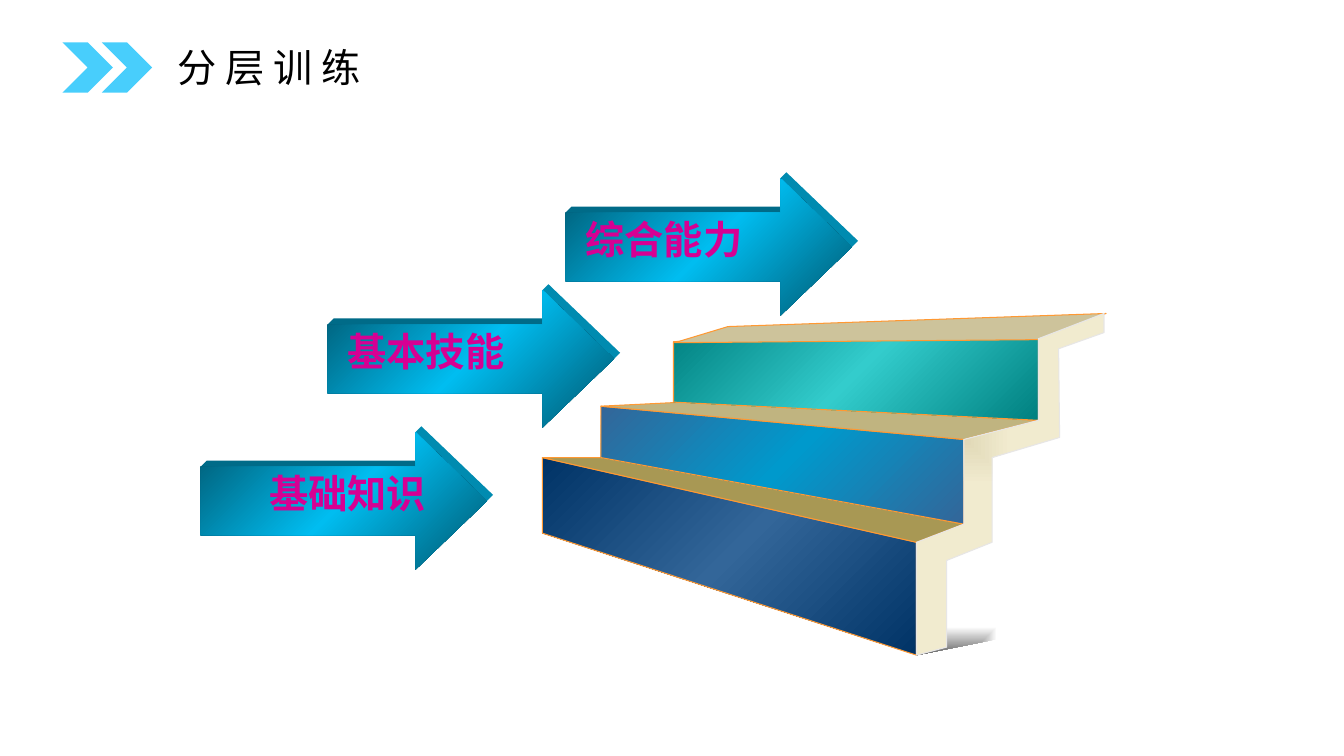
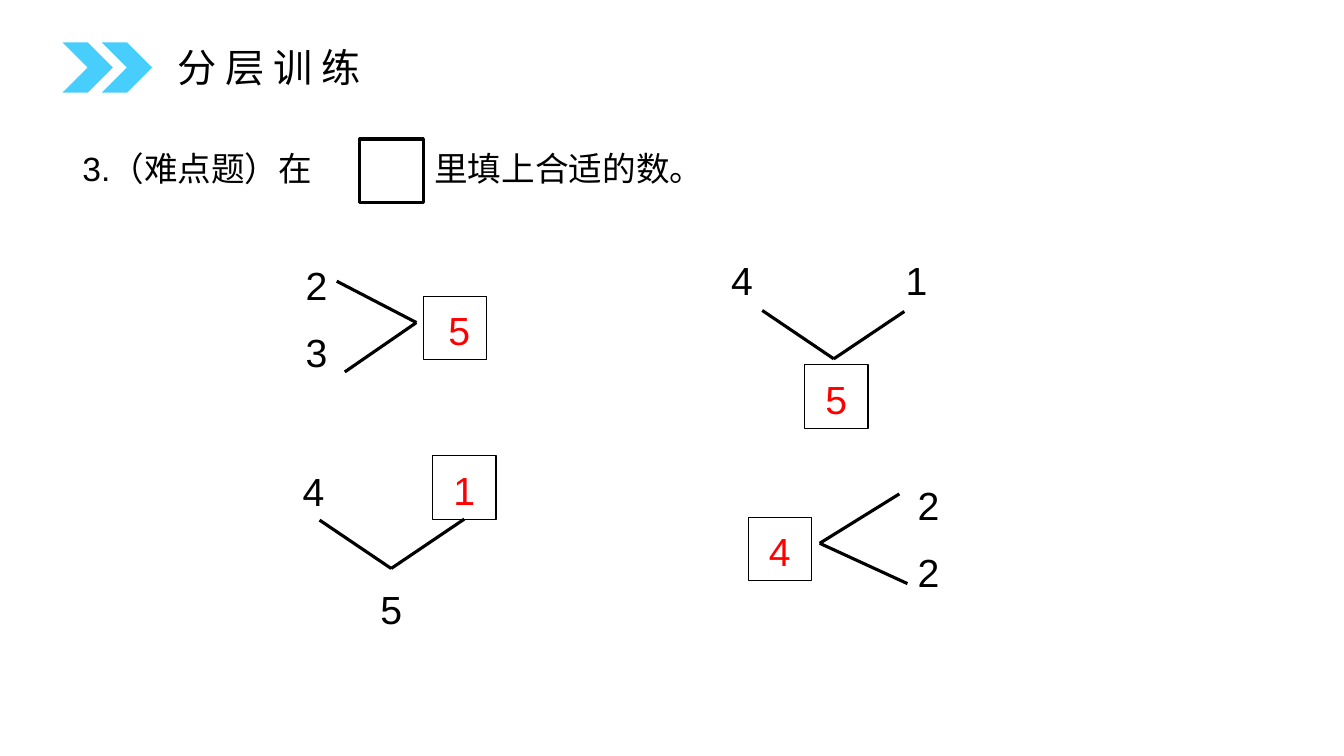
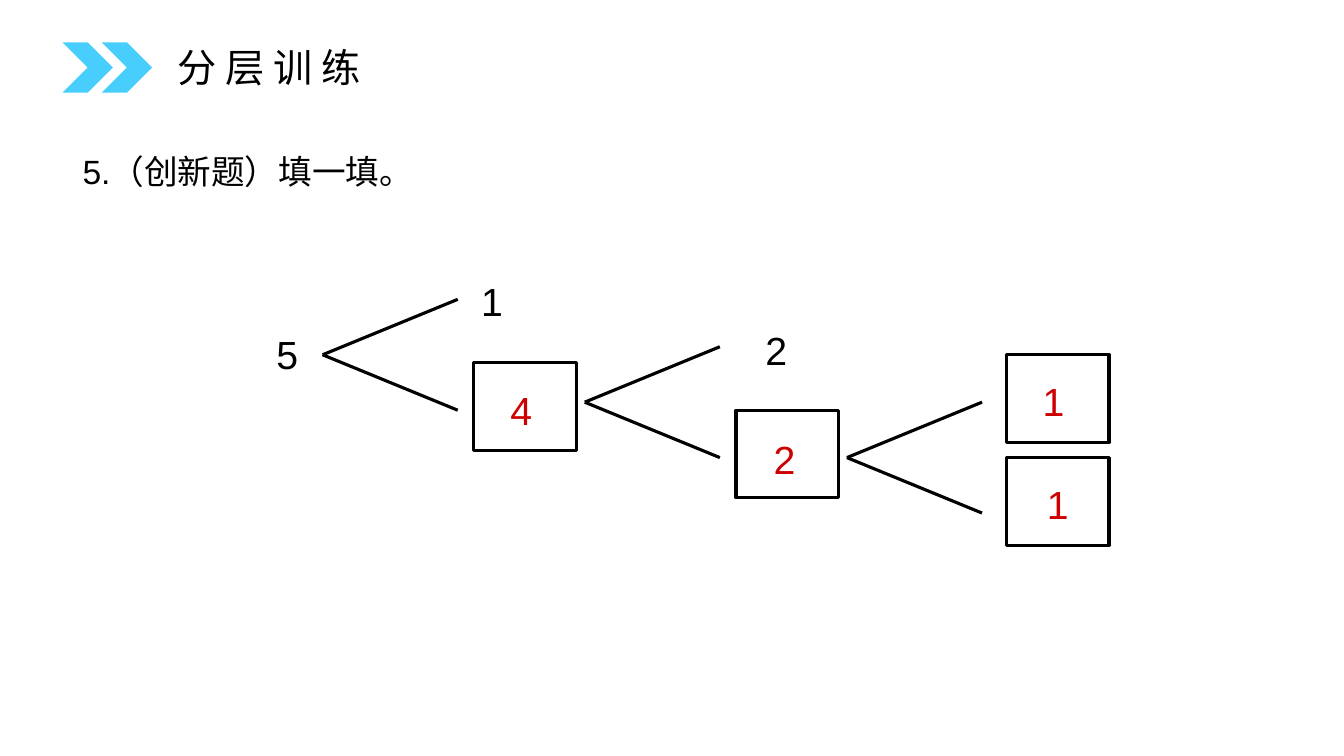
"""Build three slides of layered number exercises."""
from pptx import Presentation
from pptx.dml.color import RGBColor
from pptx.enum.lang import MSO_LANGUAGE_ID
from pptx.enum.shapes import MSO_CONNECTOR, MSO_SHAPE
from pptx.enum.text import MSO_ANCHOR, PP_ALIGN
from pptx.oxml import parse_xml
from pptx.oxml.ns import nsdecls, qn
from pptx.util import Inches, Pt

COLUMNS, ROWS = 13.33, 7.5
CELL = Inches(1)
FONT = "Arial"
BLACK = RGBColor(0x00, 0x00, 0x00)
WHITE = RGBColor(0xFF, 0xFF, 0xFF)
RED = RGBColor(0xFF, 0x00, 0x00)
DARK_RED = RGBColor(0xCC, 0x00, 0x00)
SKY = RGBColor(0x48, 0xCE, 0xFC)
MAGENTA = RGBColor(0xD6, 0x00, 0x93)
ORANGE = RGBColor(0xFF, 0x99, 0x33)
PALE_GREY = RGBColor(0xE7, 0xE6, 0xE6)
GREY = RGBColor(0x5F, 0x5F, 0x5F)
NAVY = RGBColor(0x00, 0x33, 0x66)
STEEL = RGBColor(0x33, 0x66, 0x99)
BLUE = RGBColor(0x00, 0x99, 0xCC)
TEAL = RGBColor(0x00, 0x80, 0x80)
AQUA = RGBColor(0x33, 0xCC, 0xCC)
LOW_TREAD = RGBColor(0xA8, 0x98, 0x54)
MIDDLE_TREAD = RGBColor(0xC0, 0xB4, 0x80)
TOP_TREAD = RGBColor(0xCD, 0xC3, 0x9B)
CREAM = RGBColor(0xF1, 0xEB, 0xCF)
ARROW_DARK = RGBColor(0x00, 0x57, 0x6F)
ARROW_BRIGHT = RGBColor(0x00, 0xBD, 0xF0)
ARROW_TOP = RGBColor(0x00, 0x6B, 0x88)
ARROW_EDGE = RGBColor(0x00, 0x8B, 0xB0)

DIAGONAL = '<a:lin ang="2700000" scaled="0"/>'
FROM_TOP_LEFT = '<a:path path="rect"><a:fillToRect r="100000" b="100000"/></a:path>'
FROM_BOTTOM_LEFT = '<a:path path="rect"><a:fillToRect t="100000" r="100000"/></a:path>'


def cells(*counts):
    """Turn counts of grid cells into slide lengths."""
    return [round(count * CELL) for count in counts]


def paint(shape, colors, direction=DIAGONAL):
    """Fill a shape with one colour, or with an even gradient of several."""
    shape.shadow.inherit = False
    shape.fill.solid()
    shape.fill.fore_color.rgb = colors[0]
    if len(colors) > 1:
        step = 100000 // (len(colors) - 1)
        stops = "".join(
            f'<a:gs pos="{index * step}"><a:srgbClr val="{color}"/></a:gs>'
            for index, color in enumerate(colors))
        solid = shape.element.spPr.find(qn("a:solidFill"))
        solid.getparent().replace(solid, parse_xml(
            f'<a:gradFill {nsdecls("a")} rotWithShape="1">'
            f'<a:gsLst>{stops}</a:gsLst>{direction}</a:gradFill>'))


def outline(shape, color=None, width=0.75):
    """Draw the outline of a shape, or take it away."""
    if color is None:
        shape.line.fill.background()
    else:
        shape.line.color.rgb = color
        shape.line.width = Pt(width)


def add_polygon(parent, points, colors, line=None, direction=DIAGONAL):
    """Add a closed outline through grid points."""
    first, *others = [cells(*point) for point in points]
    builder = parent.shapes.build_freeform(*first)
    builder.add_line_segments(others, close=True)
    polygon = builder.convert_to_shape()
    paint(polygon, colors, direction)
    outline(polygon, line)


def set_text(shape, text, size, color, align, bold=False):
    """Write one vertically centred paragraph in a shape."""
    frame = shape.text_frame
    frame.word_wrap = True
    frame.vertical_anchor = MSO_ANCHOR.MIDDLE
    frame.text = text
    para = frame.paragraphs[0]
    para.alignment = align
    font = para.runs[0].font
    font.name, font.size, font.bold = FONT, Pt(size), bold
    font.color.rgb = color
    font.language_id = MSO_LANGUAGE_ID.SIMPLIFIED_CHINESE


def add_text(parent, left, middle, width, text, size=24, color=BLACK,
             align=PP_ALIGN.LEFT, bold=False):
    """Add a line of text centred on a height."""
    height = 0.58
    box = parent.shapes.add_textbox(*cells(left, middle - height / 2, width, height))
    set_text(box, text, size, color, align, bold)


def add_number(page, center, middle, text):
    """Add a given number centred on a point."""
    width = 0.95
    add_text(page, center - width / 2, middle, width, text, 28, align=PP_ALIGN.CENTER)


def add_box(page, left, top, width, height, line_width):
    """Add an empty outlined box."""
    box = page.shapes.add_shape(MSO_SHAPE.RECTANGLE, *cells(left, top, width, height))
    box.shadow.inherit = False
    box.fill.background()
    outline(box, BLACK, line_width)
    return box


def fill_in(box, answer, color, right=0, down=0):
    """Write an answer in a box, moved a little off its middle."""
    set_text(box, answer, 28, color, PP_ALIGN.CENTER)
    frame = box.text_frame
    frame.margin_left, frame.margin_right = cells(0.1 + right, 0.1 - right)
    frame.margin_top, frame.margin_bottom = cells(0.05 + down, 0.05 - down)


def add_branch(page, apex, *ends):
    """Add lines that fan out from one point and return them."""
    lines = []
    for end in ends:
        line = page.shapes.add_connector(MSO_CONNECTOR.STRAIGHT, *cells(*apex, *end))
        line.element.spPr.append(parse_xml(f'<a:effectLst {nsdecls("a")}/>'))
        outline(line, BLACK, 2.25)
        lines.append(line)
    return lines


def add_arrow(page, left, top, text, indent):
    """Add a raised arrow with its label."""
    width, height, depth = 2.84, 1.36, 0.06
    head, shoulder = left + width - 0.71, top + height / 4
    tip, middle = left + width, top + height / 2
    group = page.shapes.add_group_shape()
    add_polygon(group, [(left, shoulder), (left + depth, shoulder - depth),
                        (head, shoulder - depth), (head, shoulder)], [ARROW_TOP])
    add_polygon(group, [(head, top), (head + depth, top - depth),
                        (tip + depth, middle - depth), (tip, middle)], [ARROW_EDGE])
    arrow = group.shapes.add_shape(
        MSO_SHAPE.RIGHT_ARROW, *cells(left, top, width, height))
    arrow.adjustments[0], arrow.adjustments[1] = 0.5, 0.52
    paint(arrow, [ARROW_DARK, ARROW_BRIGHT, ARROW_DARK])
    outline(arrow)
    add_text(group, left + indent, middle - 0.08, 2, text, 28, MAGENTA, bold=True)


def add_stairs(page):
    """Add the three steps, their side and their shadow."""
    group = page.shapes.add_group_shape()
    add_polygon(group, [(9.09, 6.5), (10.95, 6.13), (8.82, 5.94)],
                [GREY, WHITE], direction=FROM_BOTTOM_LEFT)
    steps = [
        ([(9.09, 6.5), (5.38, 5.29), (5.38, 4.54), (9.09, 5.38)], [NAVY, STEEL, NAVY]),
        ([(5.38, 4.54), (9.09, 5.38), (9.56, 5.2), (6.03, 4.54)], [LOW_TREAD]),
        ([(9.56, 5.2), (5.96, 4.54), (5.96, 4.03), (9.56, 4.36)], [STEEL, BLUE, STEEL]),
        ([(5.96, 4.03), (6.77, 3.99), (10.3, 4.17), (9.56, 4.36)], [MIDDLE_TREAD]),
        ([(6.68, 3.99), (6.68, 3.39), (10.3, 3.24), (10.3, 4.17)], [TEAL, AQUA, TEAL]),
        ([(6.69, 3.4), (7.22, 3.24), (10.97, 3.11), (10.29, 3.37)], [TOP_TREAD]),
    ]
    for points, colors in steps:
        add_polygon(group, points, colors, ORANGE)
    side = [(9.09, 6.5), (9.09, 5.38), (9.56, 5.2), (9.56, 4.36), (10.3, 4.17),
            (10.3, 3.36), (10.95, 3.11), (10.95, 3.3), (10.5, 3.46), (10.51, 4.34),
            (9.84, 4.54), (9.84, 5.38), (9.39, 5.56), (9.39, 6.42)]
    add_polygon(group, side, [TOP_TREAD, CREAM], PALE_GREY, FROM_TOP_LEFT)


def decorate_layout(layout, page):
    """Put the two chevrons on the layout that all slides share."""
    tree = layout.shapes.element
    for placeholder in list(layout.placeholders):
        tree.remove(placeholder.element)
    for left in (0.62, 1.01):
        chevron = page.shapes.add_shape(MSO_SHAPE.CHEVRON, *cells(left, 0.42, 0.5, 0.5))
        paint(chevron, [SKY])
        outline(chevron)
        tree.append(chevron.element)


def add_page(deck):
    """Add a blank slide with the shared title."""
    page = deck.slides.add_slide(deck.slide_layouts[6])
    add_text(page, 1.66, 0.66, 5.59, "分 层 训 练", 28)
    return page


def build_levels(page):
    """Show the three levels as arrows that climb the stairs."""
    add_stairs(page)
    add_arrow(page, 1.99, 4.29, "基础知识", 0.58)
    add_arrow(page, 3.25, 2.88, "基本技能", 0.1)
    add_arrow(page, 5.61, 1.77, "综合能力", 0.1)


def build_fill_in(page):
    """Show the four small number bonds."""
    add_text(page, 0.72, 1.67, 2.8, "3.（难点题）在")
    add_text(page, 4.21, 1.67, 5, "里填上合适的数。")
    side = 0.63
    add_box(page, 3.57, 1.38, side, side, 2.25)
    answers = [(4.2, 2.94, "5", 0.04), (7.98, 3.62, "5", 0),
               (7.42, 5.13, "4", 0), (4.29, 4.52, "1", 0)]
    for left, top, answer, right in answers:
        box = add_box(page, left, top, side, side, 0.75)
        fill_in(box, answer, RED, right, 0.02)
    add_branch(page, (4.13, 3.2), (3.34, 2.79), (3.42, 3.69))
    add_branch(page, (8.27, 3.56), (7.56, 3.08), (8.97, 3.09))
    add_branch(page, (8.13, 5.39), (8.92, 4.9), (9, 5.79))
    to_box = add_branch(page, (3.88, 5.64), (3.17, 5.16), (4.6, 5.15))[1]
    to_box.end_connect(box, 2)
    for number in [(3.14, 2.83, "2"), (3.14, 3.49, "3"), (7.36, 2.78, "4"),
                   (9.09, 2.78, "1"), (3.11, 4.87, "4"), (3.88, 6.04, "5"),
                   (9.21, 5.01, "2"), (9.21, 5.67, "2")]:
        add_number(page, *number)


def build_chain(page):
    """Show the chain of number bonds."""
    add_text(page, 0.72, 1.7, 8.62, "5.（创新题）填一填。")
    for x, y in [(3.2, 3.52), (5.8, 3.99), (8.4, 4.54)]:
        add_branch(page, (x, y), (x + 1.34, y - 0.55), (x + 1.34, y + 0.55))
    for left, top, answer, right, down in [
            (4.7, 3.6, "4", -0.04, 0.03), (7.3, 4.07, "2", -0.03, 0.05),
            (9.98, 3.52, "1", -0.04, 0.02), (9.98, 4.54, "1", 0, 0.02)]:
        box = add_box(page, left, top, 1.02, 0.87, 2.25)
        fill_in(box, answer, DARK_RED, right, down)
    for number in [(2.85, 3.51, "5"), (4.88, 2.98, "1"), (7.7, 3.47, "2")]:
        add_number(page, *number)


def main():
    """Build and save the deck."""
    deck = Presentation()
    deck.slide_width, deck.slide_height = cells(COLUMNS, ROWS)
    pages = [add_page(deck) for _ in range(3)]
    decorate_layout(deck.slide_layouts[6], pages[0])
    for build, page in zip((build_levels, build_fill_in, build_chain), pages):
        build(page)
    deck.save("out.pptx")


if __name__ == "__main__":
    main()
